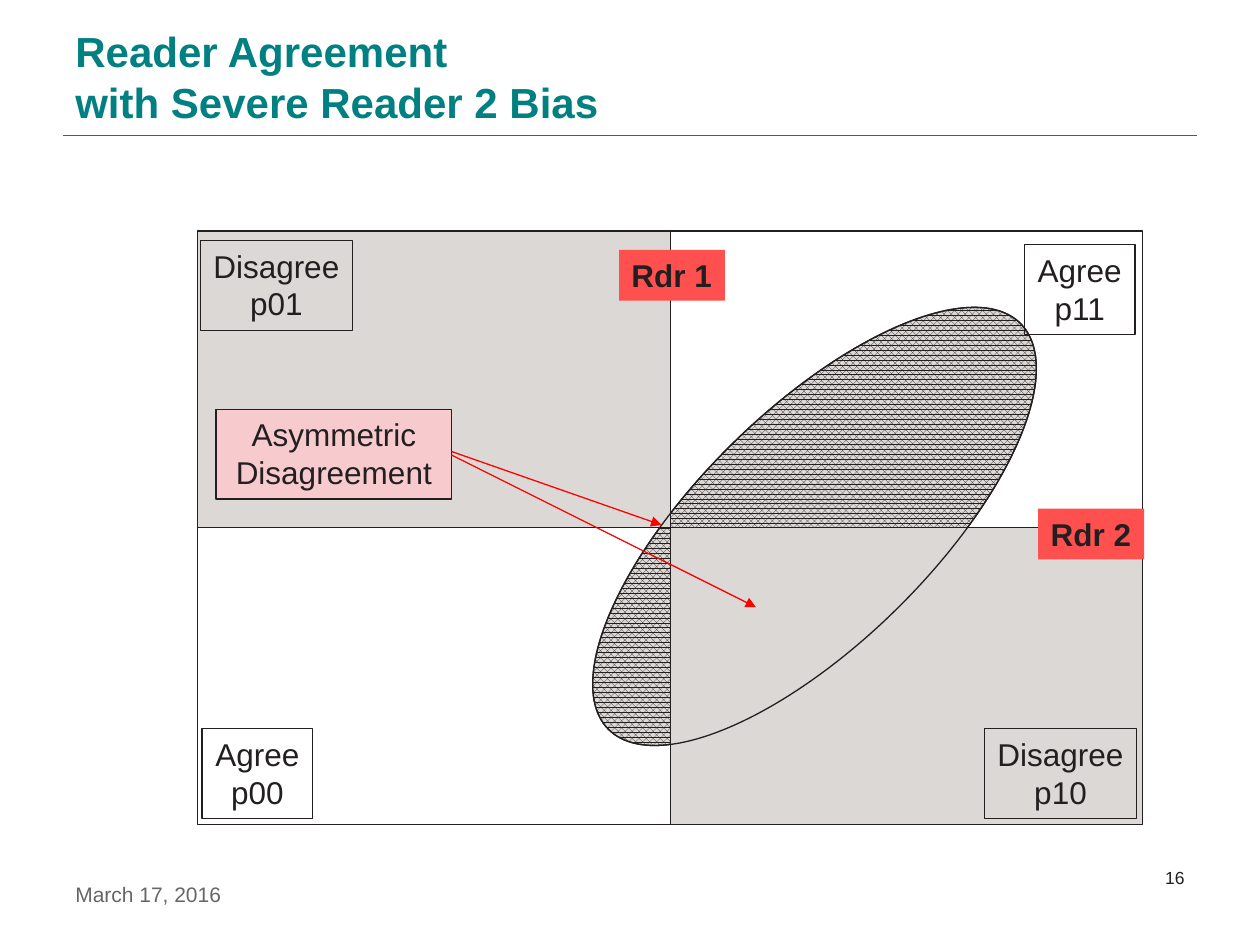
from lxml import etree
from pptx import Presentation
from pptx.dml.color import RGBColor
from pptx.enum import dml, shapes, text
from pptx.oxml import ns
from pptx.util import Pt

INK, GREY, RED, PINK = "231F20", "DCD8D6", "FF5050", "F7CBCE"
LEFT, TOP, CELL_W, CELL_H = 113, 132, 270, 169.5
MID_X, MID_Y = LEFT + CELL_W, TOP + CELL_H
ELLIPSE = (300.2, 234.2, 330.5, 133.2)
RECT, OVAL = shapes.MSO_SHAPE.RECTANGLE, shapes.MSO_SHAPE.OVAL
LEFT_AL, CENTER, RIGHT = text.PP_ALIGN.LEFT, text.PP_ALIGN.CENTER, text.PP_ALIGN.RIGHT

TEXTS = [
    ("March 17, 2016", (36, 500.4, 210, 21.6), 12, "666666", False, LEFT_AL, text.MSO_ANCHOR.TOP),
    ("16", (534, 491.8, 150, 36), 10, INK, False, RIGHT, text.MSO_ANCHOR.TOP),
    ("Reader Agreement\vwith Severe Reader 2 Bias", (36, 21.6, 534, 44), 24, "008080",
     True, LEFT_AL, text.MSO_ANCHOR.MIDDLE),
]
AXES = [((MID_X, 137), (MID_X, 466)), ((LEFT, MID_Y), (643, MID_Y))]
CELLS = [(0, 0, GREY), (0, 1, None), (1, 1, GREY)]
READERS = [("Rdr 1", (353.8, 142.8, 60.5, 29)), ("Rdr 2", (593.3, 290.7, 60.5, 29))]
LABELS = [
    ("Disagree\np01", (114.4, 137.4, 87, 51.4), None),
    ("Disagree\np10", (562.5, 416.3, 87, 51.4), None),
    ("Agree\np11", (585.3, 139.8, 63.3, 51.4), None),
    ("Agree\np00", (115.4, 416.3, 63.3, 51.4), None),
    ("Asymmetric Disagreement", (123.5, 233.8, 134.5, 51.4), PINK),
]
ARROWS = [((258, 260), (432, 347)), ((258, 258), (378, 300))]


def rgb(value):
    return RGBColor.from_string(value)


def add_line(s, start, end, color, width=0.75, arrow=False):
    c = s.shapes.add_connector(shapes.MSO_CONNECTOR.STRAIGHT, *map(Pt, start + end))
    c.line.color.rgb = rgb(color)
    c.line.width = Pt(width)
    if arrow:
        etree.SubElement(c.line._get_or_add_ln(), ns.qn("a:tailEnd"), type="triangle")
    etree.SubElement(c._element.spPr, ns.qn("a:effectLst"))


def add_shape(s, kind, box, fill=None, line=INK):
    sp = s.shapes.add_shape(kind, *map(Pt, box))
    sp.shadow.inherit = False
    if fill:
        sp.fill.solid()
        sp.fill.fore_color.rgb = rgb(fill)
    else:
        sp.fill.background()
    if line:
        sp.line.color.rgb = rgb(line)
        sp.line.width = Pt(0.75)
    else:
        sp.line.fill.background()
    return sp


def add_ellipse(s):
    sp = add_shape(s, OVAL, ELLIPSE)
    sp.rotation = 315.5
    return sp


def add_cell(s, col, row, fill):
    add_shape(s, RECT, (LEFT + col * CELL_W, TOP + row * CELL_H, CELL_W, CELL_H), fill)


def set_text(sp, content, size, color=INK, bold=False, align=CENTER,
             anchor=text.MSO_ANCHOR.TOP, wrap=True):
    tf = sp.text_frame
    tf.word_wrap = wrap
    tf.vertical_anchor = anchor
    tf.text = content
    for p in tf.paragraphs:
        p.alignment = align
        for r in p.runs:
            r.font.name = "Arial"
            r.font.size = Pt(size)
            r.font.bold = bold
            r.font.color.rgb = rgb(color)


def main():
    prs = Presentation()
    prs.slide_width, prs.slide_height = Pt(720), Pt(540)
    s = prs.slides.add_slide(prs.slide_layouts[6])

    add_line(s, (36, 77), (684, 77), "5E5356", 0.25)
    for content, box, *style in TEXTS:
        set_text(s.shapes.add_textbox(*map(Pt, box)), content, *style)
    for start, end in AXES:
        add_line(s, start, end, INK)

    hatched = add_ellipse(s)
    hatched.fill.patterned()
    hatched.fill.pattern = dml.MSO_PATTERN.PERCENT_75
    hatched.fill.fore_color.rgb = rgb(INK)
    hatched.fill.back_color.rgb = rgb(GREY)
    for cell in CELLS:
        add_cell(s, *cell)
    add_ellipse(s)
    add_cell(s, 1, 0, None)

    for content, box in READERS:
        set_text(add_shape(s, RECT, box, RED, None), content, 18,
                 bold=True, align=LEFT_AL, wrap=False)
    for content, box, fill in LABELS:
        set_text(add_shape(s, RECT, box, fill), content, 18, wrap=fill is not None)
    for start, end in ARROWS:
        add_line(s, start, end, "FF0000", arrow=True)
    prs.save("out.pptx")


if __name__ == "__main__":
    main()
